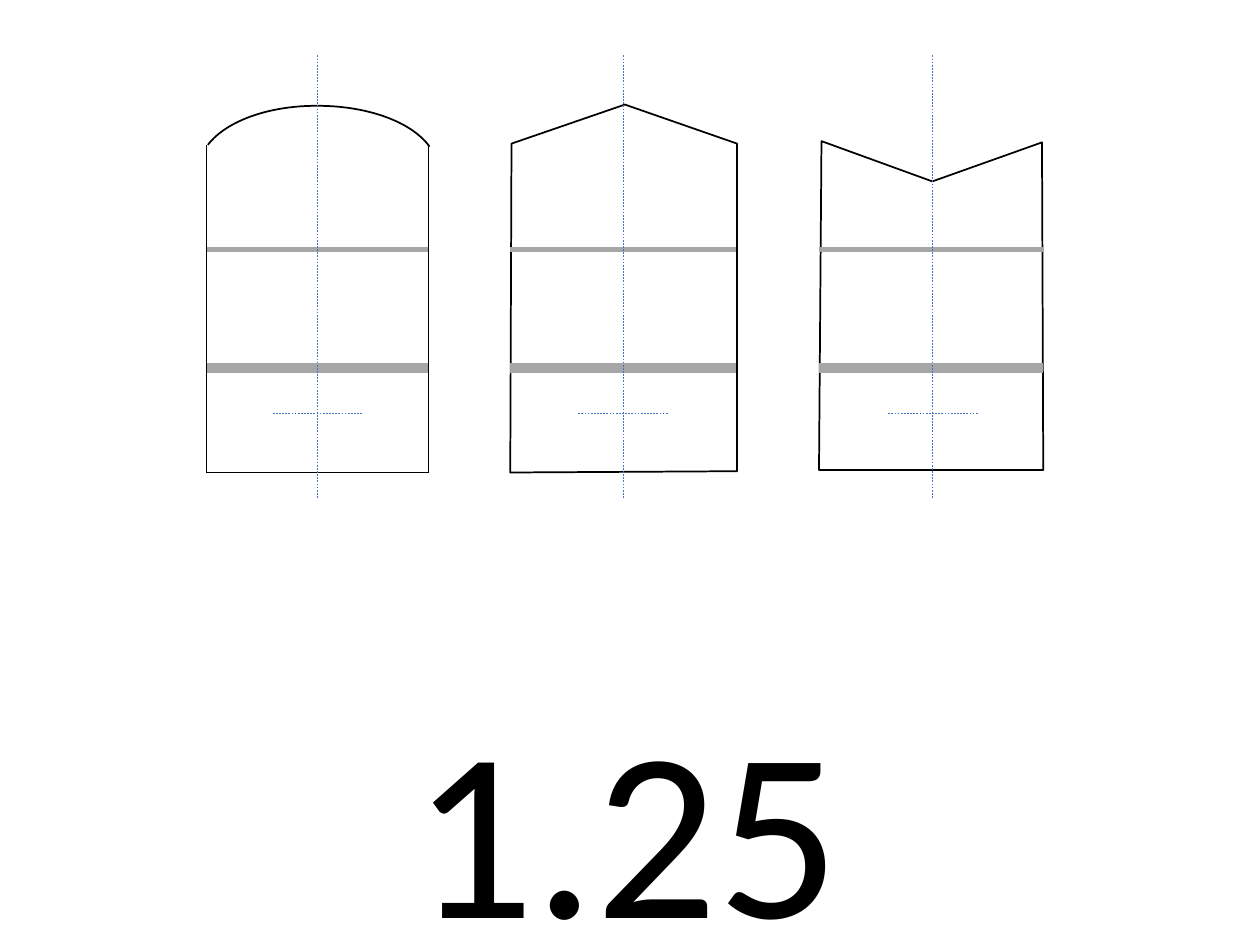
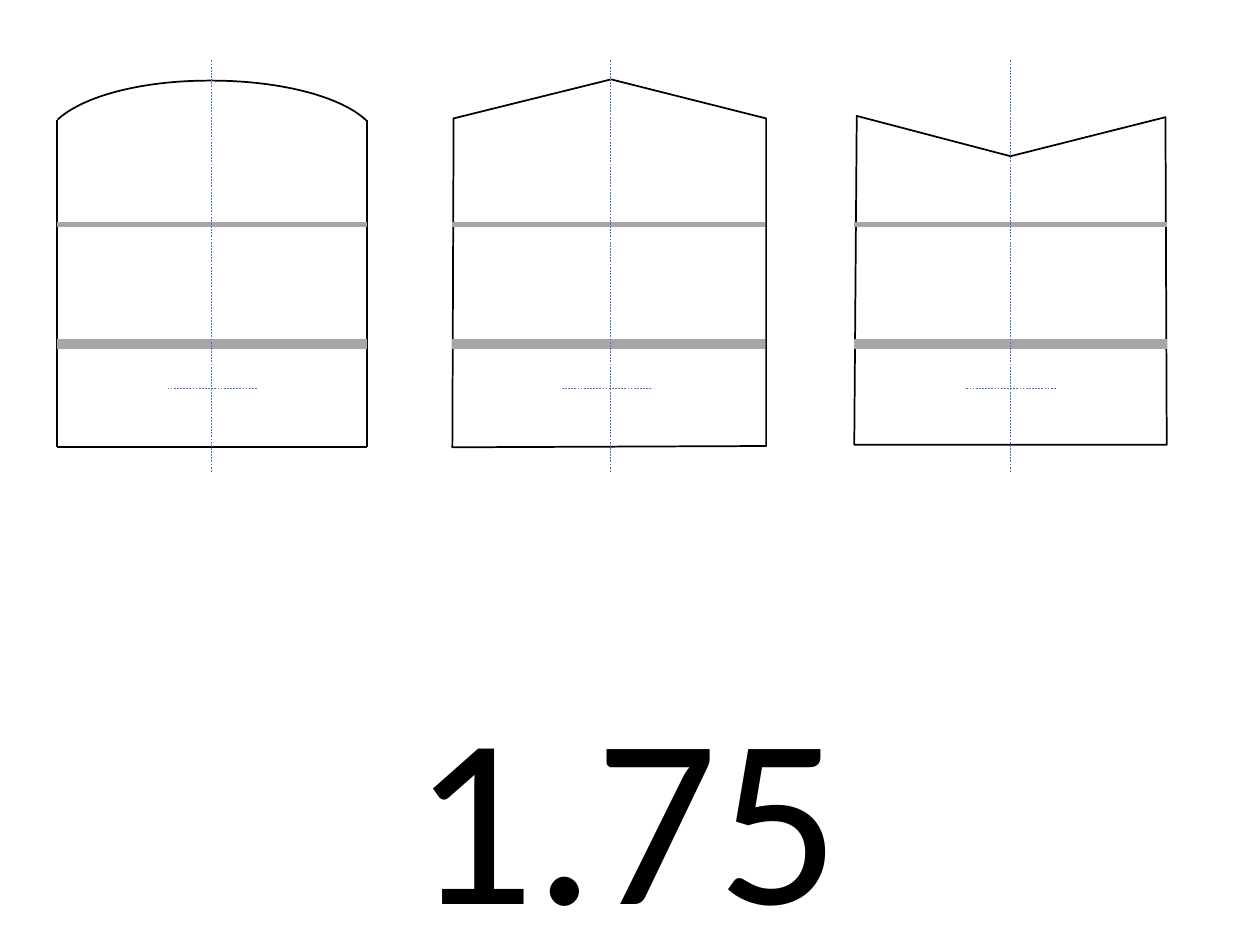
from pptx import Presentation
from pptx import util as u
from pptx.dml.color import RGBColor
from pptx.enum import dml, shapes, text
from pptx.oxml.ns import qn
from lxml import etree

Inches = u.Inches
THEME = {
    "ink": RGBColor(0, 0, 0),
    "paper": RGBColor(255, 255, 255),
    "band": RGBColor(0xA6, 0xA6, 0xA6),
    "axis": RGBColor(0x44, 0x72, 0xC4),
    "font": "Calibri",
    "size": u.Pt(138),
    "outline": u.Pt(1),
    "thin band": u.Pt(3),
    "thick band": u.Pt(6),
    "hairline": u.Pt(0.25),
}
MARK_HALF = 0.355

# Panels hold: left, right, axis, centre of the cross mark.
# Arcs hold: left, width, start, end, mirrored.
PAGES = [
    {
        "label": "1.25", "label_top": 5.32, "lift": 0, "axis": (0.44, 3.95),
        "thick_band": 2.92,
        "arch": (1.64, 3.4, 2.52, 2.52),
        "gable": (4.05, 5.85, 4.95, 4.945),
        "valley": (6.5, 8.28, 7.4, 7.405),
        "arcs": [(1.58, 1.89, 161.2, 209.25, False), (1.58, 1.85, 161.2, 208.47, True)],
    },
    {
        "label": "1.75", "label_top": 5.21, "lift": 0.2, "axis": (0.48, 3.75),
        "thick_band": 2.73,
        "arch": (0.45, 2.91, 1.68, 1.685),
        "gable": (3.59, 6.08, 4.84, 4.815),
        "valley": (6.78, 9.26, 8.02, 8.025),
        "arcs": [(0.36, 2.64, 162.38, 211, False), (0.36, 2.59, 159.74, 210.61, True)],
    },
]


def add_line(group, start, end, color, width, dashed=False):
    line = group.shapes.add_connector(
        shapes.MSO_CONNECTOR.STRAIGHT, *[Inches(value) for value in start + end])
    line.line.color.rgb = THEME[color]
    line.line.width = THEME[width]
    if dashed:
        line.line.dash_style = dml.MSO_LINE.DASH
    etree.SubElement(line._element.spPr, qn("a:effectLst"))


def style_outline(shape):
    shape.shadow.inherit = False
    shape.fill.solid()
    shape.fill.fore_color.rgb = THEME["paper"]
    shape.line.color.rgb = THEME["ink"]
    shape.line.width = THEME["outline"]


deck = Presentation()
deck.slide_width, deck.slide_height = Inches(10), Inches(7.5)

for design in PAGES:
    page = deck.slides.add_slide(deck.slide_layouts[6])
    lift = design["lift"]

    for kind in ("arch", "gable", "valley"):
        left, right, axis, mark = design[kind]
        group = page.shapes.add_group_shape()

        if kind == "arch":
            for arc_left, width, start, end, mirrored in design["arcs"]:
                arc = group.shapes.add_shape(
                    shapes.MSO_SHAPE.ARC, Inches(arc_left), Inches(0.84 - lift),
                    Inches(width), Inches(1))
                arc.adjustments[0], arc.adjustments[1] = start, end
                if mirrored:
                    arc._element.spPr.xfrm.set("flipH", "1")
                style_outline(arc)
            top, base = 1.15 - lift, 3.75 - lift
            corners = [(left, top), (left, base), (right, base), (right, top)]
            for start, end in zip(corners, corners[1:]):
                add_line(group, start, end, "ink", "outline")
        else:
            if kind == "gable":
                corners = [(left, 3.75), (right, 3.74), (right, 1.14),
                           (axis + 0.01, 0.83), (left + 0.01, 1.14)]
            else:
                corners = [(left, 3.73), (left + 0.02, 1.12), (axis, 1.44),
                           (right - 0.01, 1.13), (right, 3.73)]
            points = [(Inches(x), Inches(y - lift)) for x, y in corners]
            builder = group.shapes.build_freeform(*points[0])
            builder.add_line_segments(points[1:], close=True)
            style_outline(builder.convert_to_shape())

        band_right = right - 0.01 if kind == "gable" else right
        for y, weight in ((1.98 - lift, "thin band"), (design["thick_band"], "thick band")):
            add_line(group, (left, y), (band_right, y), "band", weight)

        axis_top, axis_bottom = design["axis"]
        add_line(group, (axis, axis_top), (axis, axis_bottom), "axis", "hairline", True)
        mark_y = 3.28 - lift
        add_line(group, (mark - MARK_HALF, mark_y), (mark + MARK_HALF, mark_y),
                 "axis", "hairline", True)

    box = page.shapes.add_textbox(
        Inches(3.15), Inches(design["label_top"]), Inches(3.64), Inches(2.42))
    frame = box.text_frame
    frame.text = design["label"]
    frame.word_wrap = False
    frame.auto_size = text.MSO_AUTO_SIZE.SHAPE_TO_FIT_TEXT
    para = frame.paragraphs[0]
    para.alignment = text.PP_ALIGN.CENTER
    span = para.runs[0]
    span.font.name = THEME["font"]
    span.font.size = THEME["size"]
    span.font.color.rgb = THEME["ink"]

deck.save("out.pptx")
